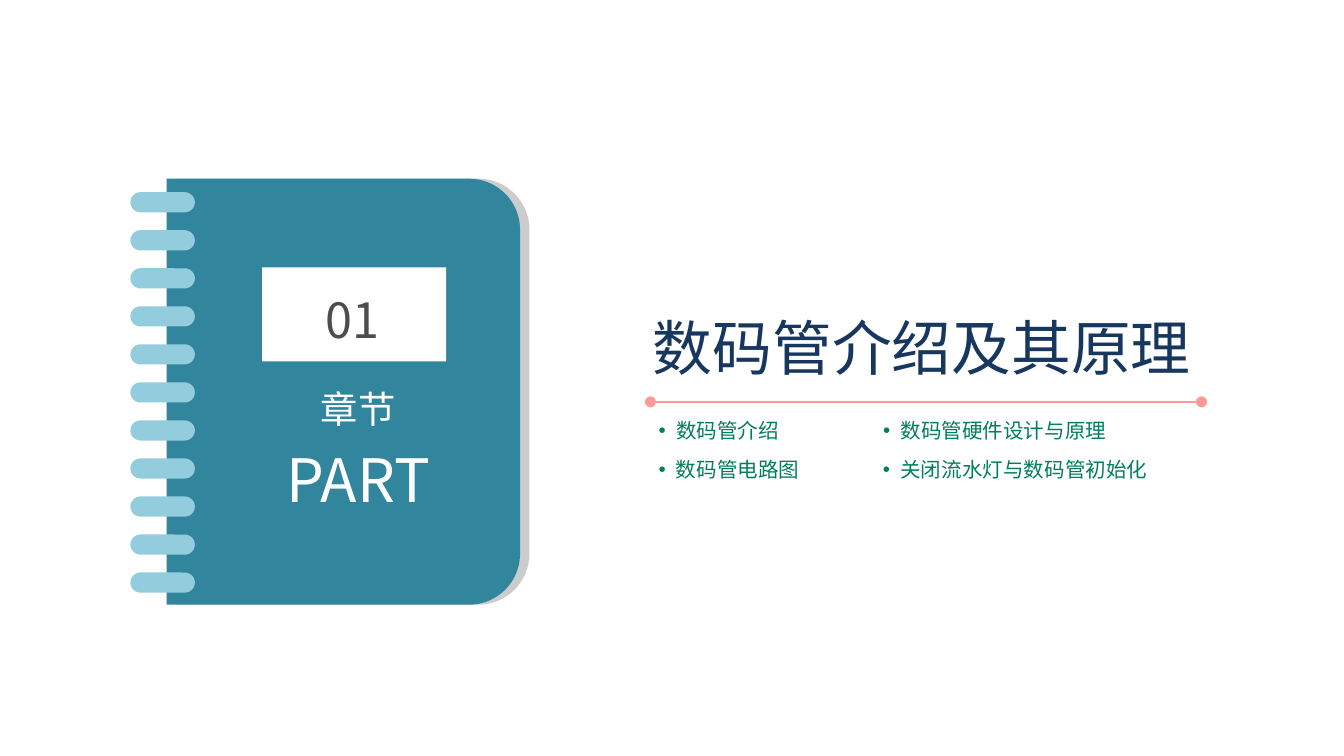
from dataclasses import dataclass
from math import cos, pi, sin

from lxml.etree import SubElement
from pptx import Presentation
from pptx.dml.color import RGBColor
from pptx.enum.shapes import MSO_CONNECTOR, MSO_SHAPE
from pptx.enum.text import MSO_ANCHOR, PP_ALIGN
from pptx.oxml.ns import qn
from pptx.util import Inches, Pt


@dataclass(frozen=True)
class Theme:
    latin: str = "Arial"
    cjk: str = "Noto Sans CJK SC"
    navy: str = "17375E"
    green: str = "007E5D"
    pink: str = "FF9999"
    teal: str = "31859C"
    ring: str = "93CDDD"
    shade: str = "CCCCCC"
    white: str = "FFFFFF"
    gray: str = "4D4D4D"
    title: int = 32
    number: int = 26
    label: int = 20
    item: int = 11


@dataclass(frozen=True)
class Box:
    x: float
    y: float
    w: float
    h: float

    def emu(self) -> tuple:
        return tuple(Inches(v) for v in (self.x, self.y, self.w, self.h))


T = Theme()


def paint(sp, color: str) -> None:
    sp.fill.solid()
    sp.fill.fore_color.rgb = RGBColor.from_string(color)
    sp.line.fill.background()
    sp.shadow.inherit = False


def add_shape(s, kind, box: Box, color: str):
    sp = s.shapes.add_shape(kind, *box.emu())
    paint(sp, color)
    return sp


def add_cover(s, box: Box, radius: float, color: str) -> None:
    """Draw a cover with both right corners rounded."""
    steps = 24
    right, bottom = box.x + box.w, box.y + box.h
    points = []
    for cy, start in ((box.y + radius, -pi / 2), (bottom - radius, 0)):
        for i in range(steps + 1):
            a = start + i * pi / 2 / steps
            points.append((right - radius + radius * cos(a), cy + radius * sin(a)))
    points.append((box.x, bottom))
    fb = s.shapes.build_freeform(Inches(box.x), Inches(box.y))
    fb.add_line_segments([(Inches(x), Inches(y)) for x, y in points])
    paint(fb.convert_to_shape(), color)


def add_text(s, box: Box, *lines: tuple, font: str, color: str, align=PP_ALIGN.CENTER,
             inset: tuple = (0, 0), wrap: bool = True, bullet: bool = False,
             space: float = 0) -> None:
    """Write (text, size) lines in one text box."""
    tf = s.shapes.add_textbox(*box.emu()).text_frame
    tf.word_wrap = wrap
    tf.vertical_anchor = MSO_ANCHOR.TOP
    tf.margin_left = tf.margin_right = Inches(inset[0])
    tf.margin_top = tf.margin_bottom = Inches(inset[1])
    for i, (text, size) in enumerate(lines):
        p = tf.add_paragraph() if i else tf.paragraphs[0]
        p.alignment = align
        if i:
            p.space_before = Pt(space)
        if bullet:
            pPr = p._p.get_or_add_pPr()
            pPr.set("marL", str(Inches(0.13)))
            pPr.set("indent", str(Inches(-0.13)))
            SubElement(pPr, qn("a:buFont"), typeface=T.latin)
            SubElement(pPr, qn("a:buChar"), char="•")
        r = p.add_run()
        r.text = text
        r.font.name = font
        r.font.size = Pt(size)
        r.font.color.rgb = RGBColor.from_string(color)


def add_rule(s, x1: float, x2: float, y: float) -> None:
    """Draw a horizontal line with a dot at each end."""
    c = s.shapes.add_connector(MSO_CONNECTOR.STRAIGHT, Inches(x1), Inches(y), Inches(x2), Inches(y))
    c.line.color.rgb = RGBColor.from_string(T.pink)
    c.line.width = Pt(1)
    ln = c._element.spPr.find(qn("a:ln"))
    for end in ("a:headEnd", "a:tailEnd"):
        SubElement(ln, qn(end), type="oval")
    SubElement(c._element.spPr, qn("a:effectLst"))


def main() -> None:
    prs = Presentation()
    prs.slide_width, prs.slide_height = Inches(10), Inches(10 * 9 / 16)
    s = prs.slides.add_slide(prs.slide_layouts[6])

    # Title and rule
    add_rule(s, 4.84, 8.94, 2.99)
    add_text(s, Box(4.57, 2.31, 4.58, 0.54), ("数码管介绍及其原理", T.title),
             font=T.latin, color=T.navy)

    # Notebook: shade, cover, label and rings
    for x, color in ((1.31, T.shade), (1.24, T.teal)):
        add_cover(s, Box(x, 1.33, 2.63, 3.17), 0.38, color)
    add_shape(s, MSO_SHAPE.RECTANGLE, Box(1.95, 1.99, 1.37, 0.7), T.white)
    for i in range(11):
        ring = add_shape(s, MSO_SHAPE.ROUNDED_RECTANGLE,
                         Box(0.97, 1.43 + i * 2.83 / 10, 0.48, 0.15), T.ring)
        ring.adjustments[0] = 0.5

    # Chapter number and name
    add_text(s, Box(1.98, 2.16, 1.29, 0.44), ("01", T.number), font=T.cjk, color=T.gray)
    add_text(s, Box(2.05, 2.87, 1.23, 0.98), ("章节", T.label), ("PART", T.title),
             font=T.cjk, color=T.white, space=6.4)

    # Topics in two columns
    columns = {4.83: (("数码管介绍", 1.05), ("数码管电路图", 1.2)),
               6.5: (("数码管硬件设计与原理", 1.82), ("关闭流水灯与数码管初始化", 2.14))}
    for x, topics in columns.items():
        for row, (topic, width) in enumerate(topics):
            add_text(s, Box(x, 3.07 + row * 0.29, width, 0.26), (topic, T.item), font=T.latin,
                     color=T.green, align=PP_ALIGN.LEFT, inset=(0.07, 0.04), wrap=False,
                     bullet=True)

    prs.save("out.pptx")


if __name__ == "__main__":
    main()
